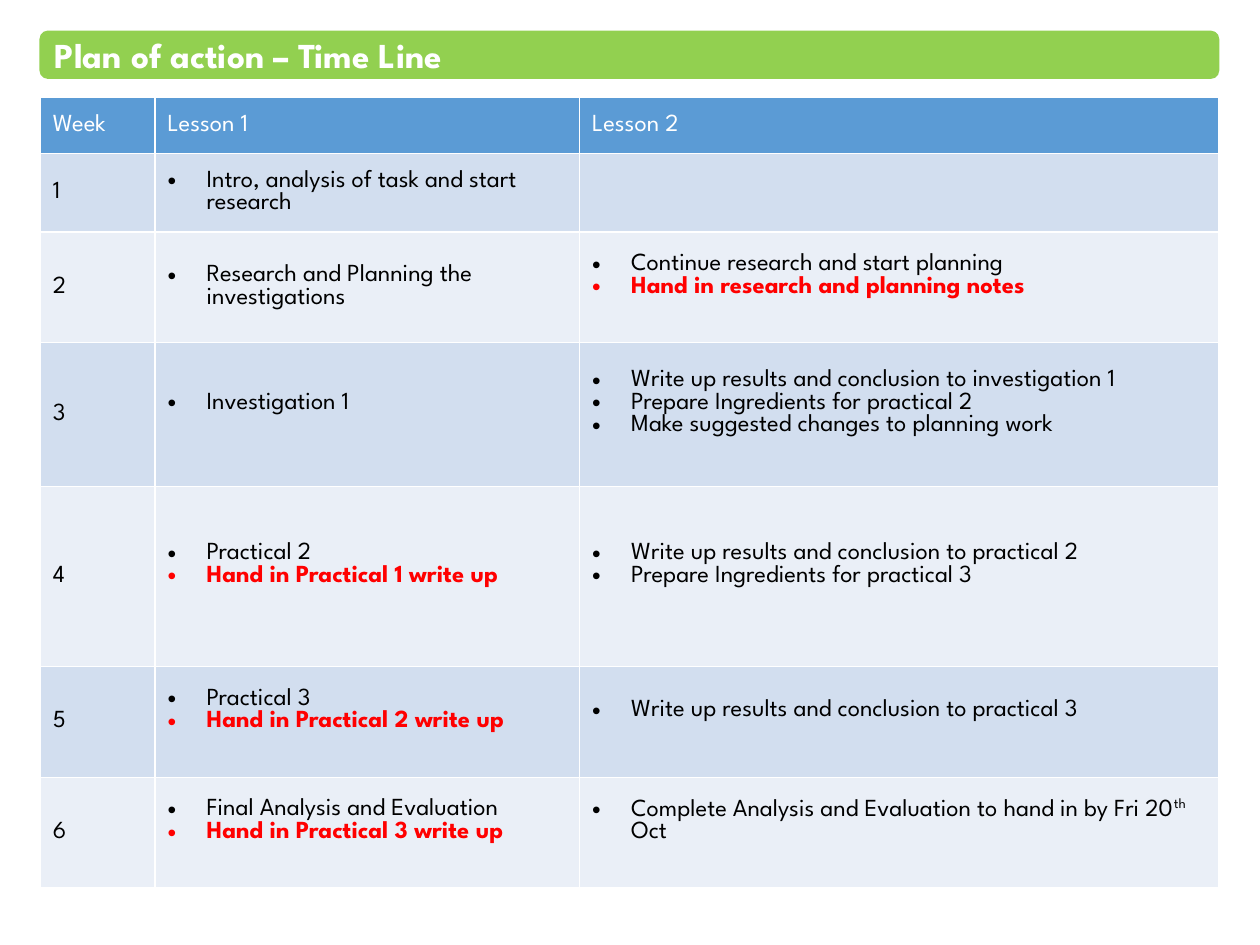
from lxml import etree
from pptx import Presentation
from pptx.dml.color import RGBColor
from pptx.enum.shapes import MSO_SHAPE
from pptx.enum.text import MSO_ANCHOR, PP_ALIGN
from pptx.oxml.ns import qn
from pptx.util import Inches, Pt

ROUNDED = MSO_SHAPE.ROUNDED_RECTANGLE
MIDDLE = MSO_ANCHOR.MIDDLE
LEFT = PP_ALIGN.LEFT

FONT = "League Spartan"
GREEN, BLUE, RED = "92D050", "5B9BD5", "FF0000"
WHITE, BLACK = "FFFFFF", "000000"
BANDS = ["D2DEEF", "EAEFF7"]

COL_WIDTHS = [0.91, 3.37, 5.07]
ROW_HEIGHTS = [0.45, 0.62, 0.88, 1.14, 1.43, 0.88, 0.88]
HEADERS = ["Week", "Lesson 1", "Lesson 2"]
HAND_IN = "Hand in"
WEEKS = [
    (["Intro, analysis of task and start research"], []),
    (["Research and Planning the investigations"],
     ["Continue research and start planning",
      "Hand in research and planning notes"]),
    (["Investigation 1"],
     ["Write up results and conclusion to investigation 1",
      "Prepare Ingredients for practical 2",
      "Make suggested changes to planning work"]),
    (["Practical 2", "Hand in Practical 1 write up"],
     ["Write up results and conclusion to practical 2",
      "Prepare Ingredients for practical 3"]),
    (["Practical 3", "Hand in Practical 2 write up"],
     ["Write up results and conclusion to practical 3"]),
    (["Final Analysis and Evaluation", "Hand in Practical 3 write up"],
     ["Complete Analysis and Evaluation to hand in by Fri 20^th^ Oct"]),
]


def rgb(color):
    return RGBColor.from_string(color)


def add_run(p, text, size, color, bold=False):
    r = p.add_run()
    r.text = text
    r.font.name = FONT
    r.font.size = Pt(size)
    r.font.bold = bold
    r.font.color.rgb = rgb(color)
    return r


def add_title(s, text):
    sp = s.shapes.add_shape(ROUNDED, Inches(0.32), Inches(0.25), Inches(9.35), Inches(0.37))
    sp.shadow.inherit = False
    sp.fill.solid()
    sp.fill.fore_color.rgb = rgb(GREEN)
    sp.line.color.rgb = rgb(GREEN)
    sp.line.width = Pt(1)
    tf = sp.text_frame
    tf.word_wrap = True
    tf.vertical_anchor = MIDDLE
    p = tf.paragraphs[0]
    p.alignment = LEFT
    add_run(p, text, 20, WHITE, True)


def style_cell(cell, fill):
    tcPr = cell._tc.get_or_add_tcPr()
    for side in ("a:lnL", "a:lnR", "a:lnT", "a:lnB"):
        ln = etree.SubElement(tcPr, qn(side), w=str(Pt(1)))
        solid = etree.SubElement(ln, qn("a:solidFill"))
        etree.SubElement(solid, qn("a:srgbClr"), val=WHITE)
    cell.fill.solid()
    cell.fill.fore_color.rgb = rgb(fill)
    cell.vertical_anchor = MIDDLE


def add_bullet(p):
    pPr = p._p.get_or_add_pPr()
    pPr.set("marL", str(Inches(0.31)))
    pPr.set("indent", str(-Inches(0.31)))
    etree.SubElement(pPr, qn("a:buFont"), typeface="Arial")
    etree.SubElement(pPr, qn("a:buChar"), char="•")


def fill_bullets(cell, items):
    tf = cell.text_frame
    for i, item in enumerate(items):
        p = tf.add_paragraph() if i else tf.paragraphs[0]
        add_bullet(p)
        due = item.startswith(HAND_IN)
        for j, part in enumerate(item.split("^")):
            r = add_run(p, part, 14, RED if due else BLACK, due)
            if j % 2:
                r.font._element.set("baseline", "30000")


def add_timeline(s):
    frame = s.shapes.add_table(len(ROW_HEIGHTS), len(COL_WIDTHS), Inches(0.32), Inches(0.77),
                               Inches(sum(COL_WIDTHS)), Inches(sum(ROW_HEIGHTS)))
    table = frame.table
    for col, width in zip(table.columns, COL_WIDTHS):
        col.width = Inches(width)
    for row, height in zip(table.rows, ROW_HEIGHTS):
        row.height = Inches(height)
    for c, text in enumerate(HEADERS):
        cell = table.cell(0, c)
        style_cell(cell, BLUE)
        add_run(cell.text_frame.paragraphs[0], text, 14, WHITE)
    for week, lessons in enumerate(WEEKS, 1):
        cells = [table.cell(week, c) for c in range(len(HEADERS))]
        for cell in cells:
            style_cell(cell, BANDS[(week - 1) % 2])
        add_run(cells[0].text_frame.paragraphs[0], str(week), 14, BLACK)
        for lesson, items in enumerate(lessons, 1):
            fill_bullets(cells[lesson], items)
            if week > 2 or (week, lesson) == (2, 2):
                cells[lesson].margin_bottom = Inches(0.23)


def main():
    prs = Presentation()
    prs.slide_width, prs.slide_height = Inches(10), Inches(7.5)
    s = prs.slides.add_slide(prs.slide_layouts[6])
    add_timeline(s)
    add_title(s, "Plan of action – Time Line")
    prs.save("out.pptx")


if __name__ == "__main__":
    main()
